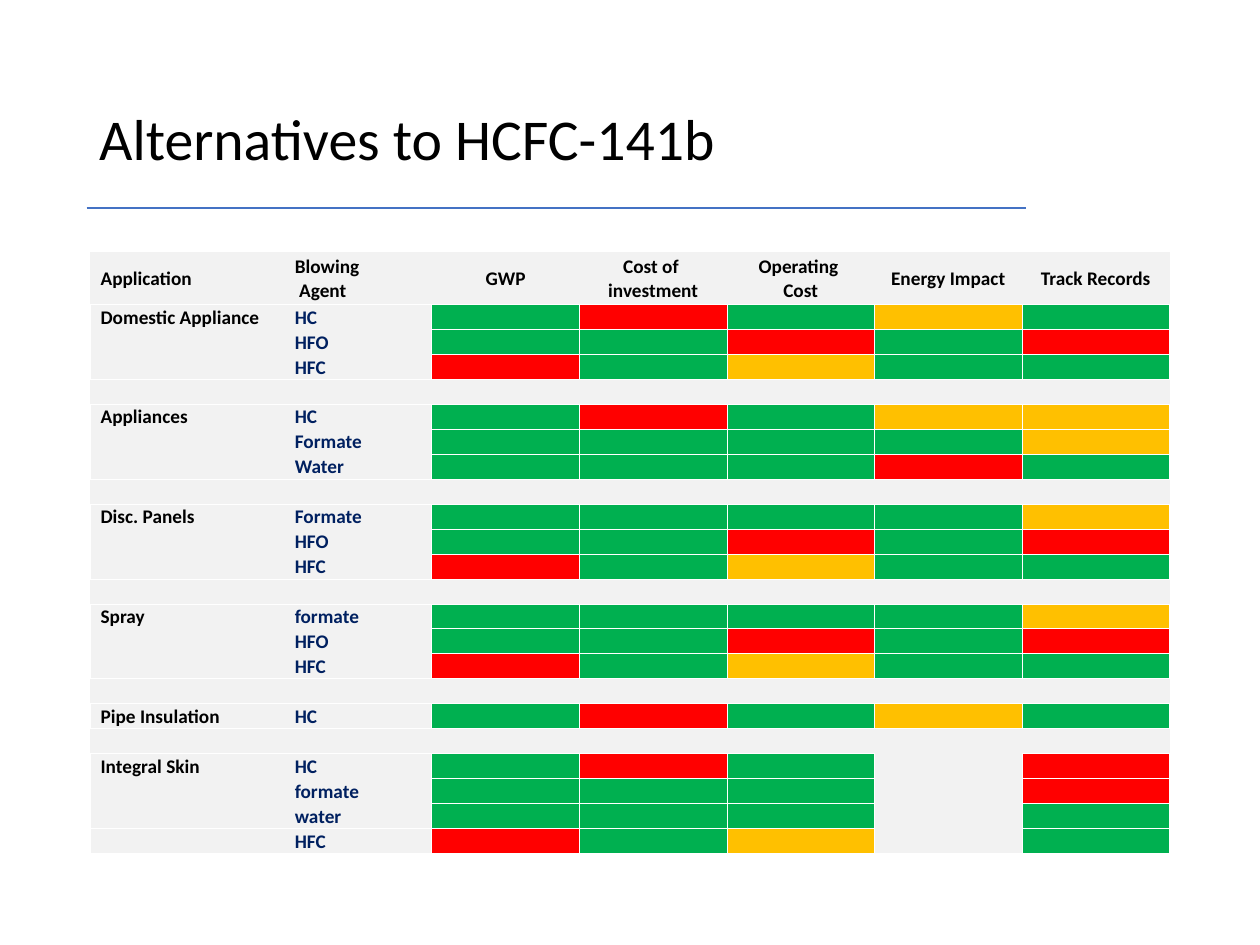
from lxml import etree
from pptx import Presentation
from pptx.dml.color import RGBColor
from pptx.enum import shapes, text
from pptx.oxml import ns
from pptx.util import Pt

BLACK = RGBColor(0x00, 0x00, 0x00)
NAVY = RGBColor(0x00, 0x20, 0x60)
BLUE = RGBColor(0x44, 0x72, 0xC4)
GREY = RGBColor(0xF2, 0xF2, 0xF2)
RATINGS = {
    "G": RGBColor(0x00, 0xB0, 0x50),
    "O": RGBColor(0xFF, 0xC0, 0x00),
    "R": RGBColor(0xFF, 0x00, 0x00),
    "-": GREY,
}
HEADER = ["Application", "Blowing\n Agent", "GWP", "Cost of \ninvestment",
          "Operating \nCost", "Energy Impact", "Track Records"]
GROUPS = [
    ("Domestic Appliance", [("HC", "GRGOG"), ("HFO", "GGRGR"), ("HFC", "RGOGG")]),
    ("Appliances", [("HC", "GRGOO"), ("Formate", "GGGGO"), ("Water", "GGGRG")]),
    ("Disc. Panels", [("Formate", "GGGGO"), ("HFO", "GGRGR"), ("HFC", "RGOGG")]),
    ("Spray", [("formate", "GGGGO"), ("HFO", "GGRGR"), ("HFC", "RGOGG")]),
    ("Pipe Insulation", [("HC", "GRGOG")]),
    ("Integral Skin", [("HC", "GRG-R"), ("formate", "GGG-R"), ("water", "GGG-G"),
                       ("HFC", "RGO-G")]),
]


def write(p, words, size=11, color=BLACK, bold=True, align=text.PP_ALIGN.LEFT):
    p.text = words
    p.alignment = align
    for r in p.runs:
        r.font.name = "Calibri"
        r.font.size = Pt(size)
        r.font.bold = bold
        r.font.color.rgb = color
    if not words:
        etree.SubElement(p._p, ns.qn("a:endParaRPr"), sz=str(size * 100))


def format_cell(cell, fill, sides):
    tcPr = cell._tc.get_or_add_tcPr()
    for side in "LRTB":
        ln = etree.SubElement(tcPr, ns.qn("a:ln" + side), w=str(Pt(0.5)))
        if side in sides:
            solid = etree.SubElement(ln, ns.qn("a:solidFill"))
            etree.SubElement(solid, ns.qn("a:srgbClr"), val="FFFFFF")
        else:
            etree.SubElement(ln, ns.qn("a:noFill"))
    cell.fill.solid()
    cell.fill.fore_color.rgb = fill


prs = Presentation()
prs.slide_width, prs.slide_height = Pt(720), Pt(540)
s = prs.slides.add_slide(prs.slide_layouts[5])

title = s.shapes.title
title.left, title.top, title.width, title.height = Pt(49.5), Pt(29), Pt(537), Pt(104.5)
tf = title.text_frame
tf.word_wrap = True
tf.auto_size = text.MSO_AUTO_SIZE.NONE
tf.vertical_anchor = text.MSO_ANCHOR.MIDDLE
write(tf.paragraphs[0], "Alternatives to HCFC-141b", size=33, bold=False)
tf.paragraphs[0].line_spacing = 0.9

rule = s.shapes.add_connector(shapes.MSO_CONNECTOR.STRAIGHT, Pt(49.5), Pt(119), Pt(586.5), Pt(119))
rule.line.color.rgb = BLUE
rule.line.width = Pt(1)
etree.SubElement(rule._element.spPr, ns.qn("a:effectLst"))

rows = []
for application, agents in GROUPS:
    if rows:
        rows.append(("", "", ""))
    for i, (agent, ratings) in enumerate(agents):
        rows.append((application if i == 0 else "", agent, ratings))

table = s.shapes.add_table(len(rows) + 1, len(HEADER), Pt(51.5), Pt(144), Pt(617), Pt(344)).table
table.first_row = table.horz_banding = False
for i, col in enumerate(table.columns):
    col.width = Pt(111) if i == 0 else Pt(84.33)
for i, row in enumerate(table.rows):
    row.height = Pt(30) if i == 0 else Pt(14.27)
    for j, cell in enumerate(row.cells):
        cell.margin_left = Pt(6) if j < 2 else Pt(0.6)
        cell.margin_right = cell.margin_top = Pt(0.6)
        cell.margin_bottom = 0
        cell.vertical_anchor = text.MSO_ANCHOR.MIDDLE if i == 0 else text.MSO_ANCHOR.BOTTOM

for j, words in enumerate(HEADER):
    cell = table.cell(0, j)
    align = text.PP_ALIGN.LEFT if j < 2 else text.PP_ALIGN.CENTER
    write(cell.text_frame.paragraphs[0], words, align=align)
    format_cell(cell, GREY, "B")

for i, (application, agent, ratings) in enumerate(rows):
    starts = application or i == len(rows) - 1
    ends = i + 2 >= len(rows) or not rows[i + 1][1]
    edges = ("T" if starts else "") + ("B" if ends else "")
    for j in range(len(HEADER)):
        cell = table.cell(i + 1, j)
        words = (application, agent)[j] if j < 2 else ""
        write(cell.text_frame.paragraphs[0], words, color=NAVY if j == 1 else BLACK)
        if not agent:
            open_below = j >= 2 and rows[i + 1][2][j - 2] == "-"
            format_cell(cell, GREY, "T" if open_below else "TB")
        elif j < 2:
            format_cell(cell, GREY, "LR"[j] + edges)
        else:
            rating = ratings[j - 2]
            format_cell(cell, RATINGS[rating], "LR" if rating == "-" else "LRTB")

prs.save("out.pptx")
